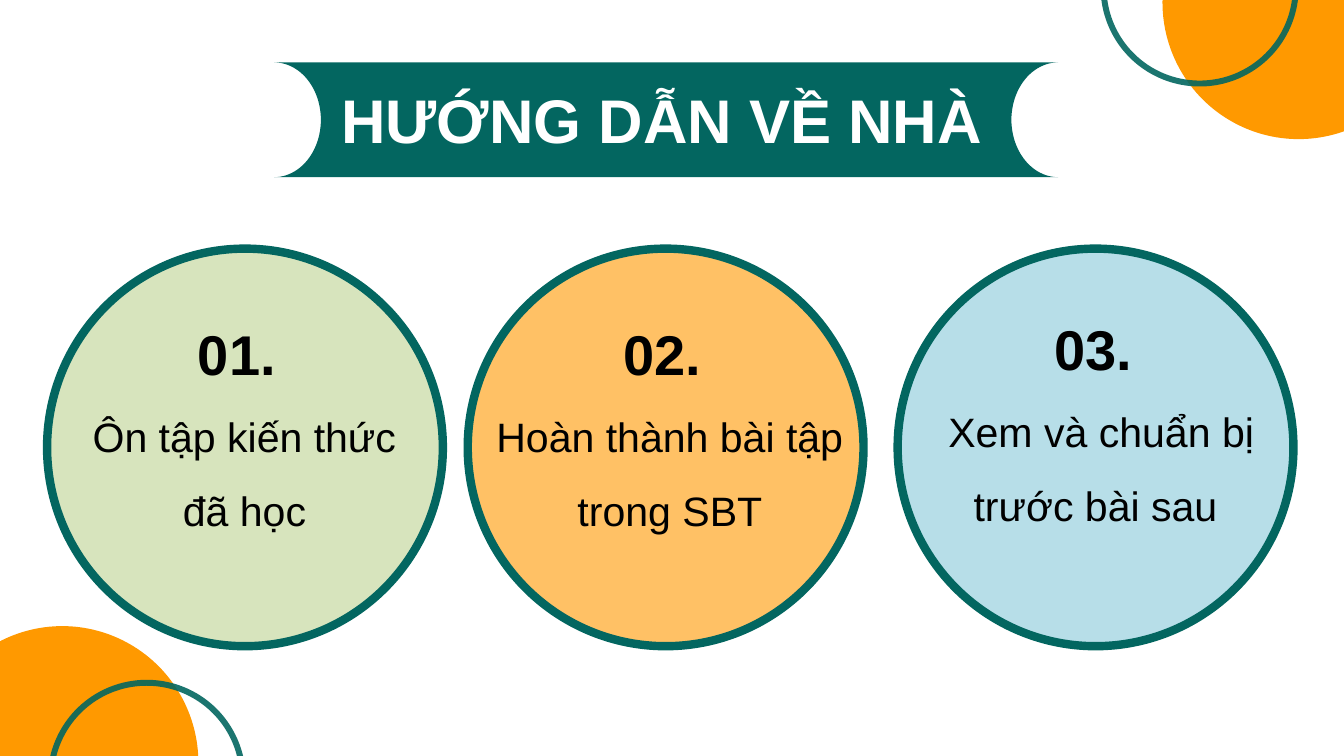
"""Build the homework guidance slide with a title banner and three numbered circles."""
import math

import lxml.etree
import pptx
import pptx.dml.color
import pptx.enum.shapes
import pptx.enum.text
import pptx.oxml.ns
import pptx.util

Cm = pptx.util.Cm
Pt = pptx.util.Pt
RGBColor = pptx.dml.color.RGBColor
MSO_SHAPE = pptx.enum.shapes.MSO_SHAPE
PP_ALIGN = pptx.enum.text.PP_ALIGN

TEAL = RGBColor(0x03, 0x66, 0x60)
ORANGE = RGBColor(0xFF, 0x99, 0x00)
GREEN = RGBColor(0xD7, 0xE4, 0xBD)
AMBER = RGBColor(0xFF, 0xC1, 0x65)
BLUE = RGBColor(0xB7, 0xDE, 0xE8)
BLACK = RGBColor(0, 0, 0)
WHITE = RGBColor(0xFF, 0xFF, 0xFF)


class SlideBuilder:
    def __init__(self, slide, font="Arial"):
        self.slide = slide
        self.font = font

    def paint(self, sp, fill, line=None, width=0):
        sp.shadow.inherit = False
        sp.fill.solid()
        sp.fill.fore_color.rgb = fill
        if line is None:
            sp.line.fill.background()
        else:
            sp.line.color.rgb = line
            sp.line.width = Pt(width)

    def oval(self, x, y, w, h, fill, line=None, width=0):
        sp = self.slide.shapes.add_shape(MSO_SHAPE.OVAL, Cm(x), Cm(y), Cm(w), Cm(h))
        self.paint(sp, fill, line, width)

    def ring(self, x, y, size, color, opacity):
        sp = self.slide.shapes.add_shape(MSO_SHAPE.DONUT, Cm(x), Cm(y), Cm(size), Cm(size))
        sp.adjustments[0] = 0.03
        self.paint(sp, color)
        clr = sp.fill._xPr.find(".//" + pptx.oxml.ns.qn("a:srgbClr"))
        lxml.etree.SubElement(clr, pptx.oxml.ns.qn("a:alpha"), val=str(opacity * 1000))

    def banner(self, x, y, w, h, notch, fill, steps=48):
        angles = [math.pi * i / steps for i in range(steps + 1)]
        curve = [(notch * math.sin(a), y + h / 2 * (1 - math.cos(a))) for a in angles]
        right = [(x + w - dx, py) for dx, py in curve]
        left = [(x + dx, py) for dx, py in reversed(curve)]
        points = [(Cm(px), Cm(py)) for px, py in right + left]
        fb = self.slide.shapes.build_freeform(*points[0])
        fb.add_line_segments(points[1:], close=True)
        self.paint(fb.convert_to_shape(), fill)

    def text(self, x, y, w, h, lines, color, align, spacing, inset=True):
        tf = self.slide.shapes.add_textbox(Cm(x), Cm(y), Cm(w), Cm(h)).text_frame
        tf.word_wrap = True
        if not inset:
            tf.margin_left = tf.margin_top = tf.margin_right = tf.margin_bottom = 0
        for i, (words, size, bold) in enumerate(lines):
            p = tf.add_paragraph() if i else tf.paragraphs[0]
            p.alignment = align
            p.line_spacing = spacing
            r = p.add_run()
            r.text = words
            r.font.name = self.font
            r.font.size = Pt(size)
            r.font.bold = bold
            r.font.color.rgb = color


def main():
    prs = pptx.Presentation()
    prs.slide_width, prs.slide_height = Cm(50.8), Cm(28.58)
    s = SlideBuilder(prs.slides.add_slide(prs.slide_layouts[6]))

    s.banner(10.36, 2.36, 29.64, 4.34, 1.77, TEAL)
    s.text(12.9, 3.71, 24.54, 2.21, [("HƯỚNG DẪN VỀ NHÀ", 66, True)],
           WHITE, PP_ALIGN.LEFT, Pt(62.2), inset=False)

    corners = [((-2.79, 23.67), (1.8, 25.7)), ((43.94, -5.08), (41.6, -4.22))]
    for disc, ring in corners:
        s.oval(*disc, 10.29, 10.34, ORANGE)
        s.ring(*ring, 7.49, TEAL, 90)

    tasks = [
        (1.78, GREEN, (2.21, 10.69, 14.07), "Ôn tập kiến thức đã học"),
        (17.68, AMBER, (17.68, 10.69, 15.29), "Hoàn thành bài tập trong SBT"),
        (33.93, BLUE, (33.96, 10.49, 15.34), "Xem và chuẩn bị trước bài sau "),
    ]
    for number, (x, fill, box, task) in enumerate(tasks, 1):
        s.oval(x, 9.4, 14.96, 15.03, fill, TEAL, 9)
        s.text(*box, 9.75, [(f"{number:02d}. ", 60, True), (task, 44, False)],
               BLACK, PP_ALIGN.CENTER, 1.5)

    prs.save("out.pptx")


if __name__ == "__main__":
    main()
